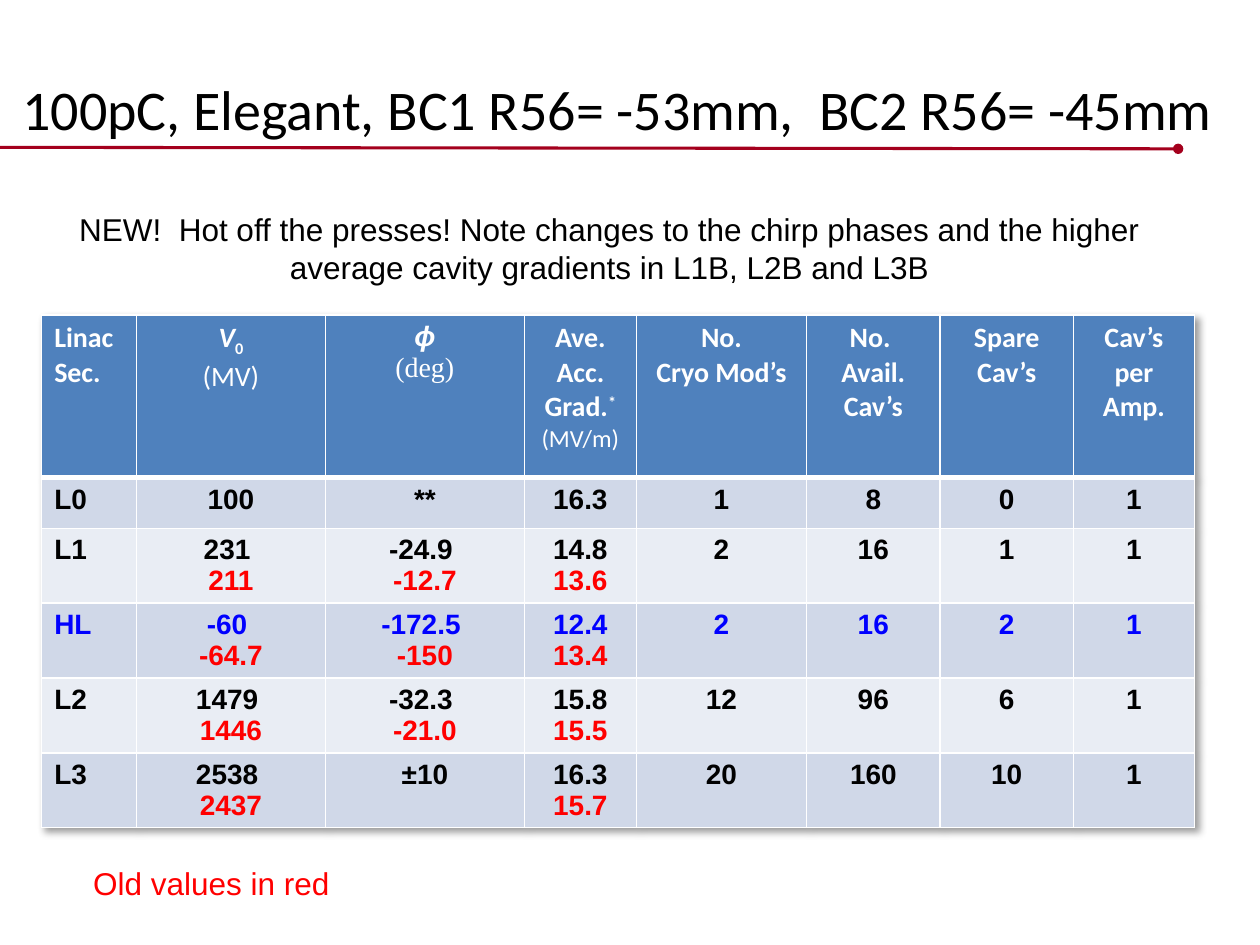
"""Build a slide with a table of linac section settings."""
from copy import deepcopy
from typing import NamedTuple

from lxml.etree import SubElement
from pptx import Presentation
from pptx.dml.color import RGBColor
from pptx.enum.shapes import MSO_CONNECTOR
from pptx.enum.text import MSO_ANCHOR as Anchor, MSO_AUTO_SIZE as AutoSize, PP_ALIGN as Align
from pptx.oxml import parse_xml
from pptx.oxml.ns import nsdecls, qn
from pptx.util import Cm, Pt

BLACK, WHITE, RED, BLUE = "000000", "FFFFFF", "FF0000", "0000FF"
HEADER_FILL, DARK_BAND, LIGHT_BAND = "4F81BD", "D0D8E8", "E9EDF4"
RULE_COLOR = "A4001D"
COLUMN_WIDTHS = (1.91, 3.81, 4.01, 2.26, 3.43, 2.69, 2.69, 2.44)
ROW_HEIGHTS = (3.28,) + (1.02,) * 5


class Span(NamedTuple):
    text: str
    color: str = BLACK
    size: float = 16
    font: str = "Arial"
    bold: bool = True
    italic: bool = False
    baseline: int = 0


class Label(NamedTuple):
    span: Span
    left: float
    top: float
    width: float
    height: float
    align: Align = Align.LEFT
    anchor: Anchor = Anchor.TOP
    wrap: bool = True
    grow: bool = True
    spacing: float = 1.0


class Section(NamedTuple):
    name: str
    cells: list
    color: str = BLACK


def head(text: str, **style) -> Span:
    """Return a span in the header style."""
    return Span(text, **{"color": WHITE, "font": "Calibri", **style})


HEADER = [
    [[head("Linac")], [head("Sec.")]],
    [[head("V", italic=True), head("0", baseline=-25000)], [head("(MV)", bold=False)]],
    [[head("ϕ", font="Arial", italic=True)],
     [head("(deg)", font="Times New Roman", bold=False)]],
    [[head("Ave.\vAcc. Grad."), head("* ", baseline=30000),
      head("(MV/m)", size=14, bold=False)]],
    [[head("No.")], [head("Cryo Mod’s")]],
    [[head("No. ")], [head("Avail.")], [head("Cav’s")]],
    [[head("Spare Cav’s")]],
    [[head("Cav’s per Amp.")]],
]

# Within a cell "/" starts a paragraph and "|" starts the old value on the same one.
SECTIONS = [
    Section("L0", ["100", "**", "16.3", "1", "8", "0", "1"]),
    Section("L1", ["231 /|211", "-24.9 /|-12.7", "14.8 |13.6", "2", "16", "1", "1"]),
    Section("HL", ["-60 /|-64.7", "-172.5 \v|-150", "12.4/|13.4", "2", "16", "2", "1"], BLUE),
    Section("L2", ["1479 /|1446", "-32.3 /|-21.0", "15.8 |15.5", "12", "96", "6", "1"]),
    Section("L3", ["2538 /|2437", "±10", "16.3 |15.7", "20", "160", "10", "1"]),
]

LABELS = [
    Label(Span("100pC, Elegant, BC1 R56= -53mm,  BC2 R56= -45mm", size=32,
               font="Calibri", bold=False),
          0.2, 0.43, 24.97, 3.68, anchor=Anchor.MIDDLE, grow=False, spacing=0.9),
    Label(Span("NEW!  Hot off the presses! Note changes to the chirp phases and the higher "
               "average cavity gradients in L1B, L2B and L3B", size=18, bold=False),
          0.64, 4.11, 23.29, 1.8, align=Align.CENTER),
    Label(Span("Old values in red", RED, 18, bold=False),
          1.63, 17.3, 5.33, 1.02, wrap=False),
]


def rgb(color: str) -> RGBColor:
    """Turn a hex string into a colour."""
    return RGBColor.from_string(color)


def section_paragraphs(value: str, color: str) -> list:
    """Split a cell value into paragraphs of new and old spans."""
    paragraphs = []
    for line in value.split("/"):
        new, _, old = line.partition("|")
        spans = [Span(new, color), Span(old, RED)]
        paragraphs.append([span for span in spans if span.text])
    return paragraphs


def write_span(paragraph, span: Span) -> None:
    """Append a span, with its line breaks, to a paragraph."""
    for index, text in enumerate(span.text.split("\v")):
        if index:
            paragraph.add_line_break()
        if text:
            run = paragraph.add_run()
            run.text = text
            font = run.font
            font.name, font.size = span.font, Pt(span.size)
            font.bold, font.italic = span.bold, span.italic
            font.color.rgb = rgb(span.color)
            if span.baseline:
                run._r.get_or_add_rPr().set("baseline", str(span.baseline))
    for line_break in paragraph._p.findall(qn("a:br")):
        if not len(line_break):
            line_break.append(deepcopy(run._r.get_or_add_rPr()))


def write_paragraphs(text_frame, paragraphs: list, align: Align) -> None:
    """Fill a text frame with paragraphs of spans."""
    for index, spans in enumerate(paragraphs):
        paragraph = text_frame.add_paragraph() if index else text_frame.paragraphs[0]
        paragraph.alignment = align
        for span in spans:
            write_span(paragraph, span)


def set_borders(cell, top: float, bottom: float) -> None:
    """Draw white borders around a cell."""
    properties = cell._tc.get_or_add_tcPr()
    widths = {"lnL": 1, "lnR": 1, "lnT": top, "lnB": bottom}
    for index, (tag, width) in enumerate(widths.items()):
        properties.insert(index, parse_xml(
            f'<a:{tag} {nsdecls("a")} w="{Pt(width)}"><a:solidFill>'
            f'<a:srgbClr val="{WHITE}"/></a:solidFill></a:{tag}>'))


def add_section_table(slide) -> None:
    """Add the table of linac sections with its shadow."""
    rows = [HEADER] + [
        [section_paragraphs(value, section.color) for value in [section.name, *section.cells]]
        for section in SECTIONS]
    frame = slide.shapes.add_table(len(rows), len(COLUMN_WIDTHS),
                                   Cm(0.84), Cm(6.35), Cm(23.29), Cm(10.74))
    table = frame.table
    for column, width in zip(table.columns, COLUMN_WIDTHS):
        column.width = Cm(width)
    for row, height in zip(table.rows, ROW_HEIGHTS):
        row.height = Cm(height)
    for row_index, row in enumerate(rows):
        band = DARK_BAND if row_index % 2 else LIGHT_BAND
        for column_index, paragraphs in enumerate(row):
            cell = table.cell(row_index, column_index)
            cell.fill.solid()
            cell.fill.fore_color.rgb = rgb(band if row_index else HEADER_FILL)
            set_borders(cell, 3 if row_index == 1 else 1, 1 if row_index else 3)
            write_paragraphs(cell.text_frame, paragraphs,
                             Align.CENTER if column_index else Align.LEFT)
    table._tbl.tblPr.insert(0, parse_xml(
        f'<a:effectLst {nsdecls("a")}><a:outerShdw blurRad="50800" dist="38100" dir="2700000"'
        f' algn="tl" rotWithShape="0"><a:srgbClr val="{BLACK}"><a:alpha val="40000"/>'
        '</a:srgbClr></a:outerShdw></a:effectLst>'))


def add_rule(slide) -> None:
    """Add the line under the title, ending in a dot."""
    rule = slide.shapes.add_connector(MSO_CONNECTOR.STRAIGHT, Cm(0), Cm(2.97), Cm(23.75), Cm(3))
    rule.line.color.rgb = rgb(RULE_COLOR)
    rule.line.width = Pt(1.75)
    SubElement(rule.line._get_or_add_ln(), qn("a:tailEnd"), type="oval")
    SubElement(rule._element.spPr, qn("a:effectLst"))


def add_label(slide, label: Label) -> None:
    """Add a text box."""
    box = slide.shapes.add_textbox(Cm(label.left), Cm(label.top),
                                   Cm(label.width), Cm(label.height))
    text_frame = box.text_frame
    text_frame.word_wrap = label.wrap
    text_frame.vertical_anchor = label.anchor
    text_frame.auto_size = AutoSize.SHAPE_TO_FIT_TEXT if label.grow else AutoSize.NONE
    write_paragraphs(text_frame, [[label.span]], label.align)
    text_frame.paragraphs[0].line_spacing = label.spacing


def main() -> None:
    """Build and save the presentation."""
    presentation = Presentation()
    presentation.slide_width, presentation.slide_height = Cm(25.4), Cm(19.05)
    slide = presentation.slides.add_slide(presentation.slide_layouts[6])
    add_rule(slide)
    add_section_table(slide)
    for label in LABELS:
        add_label(slide, label)
    presentation.save("out.pptx")


if __name__ == "__main__":
    main()
